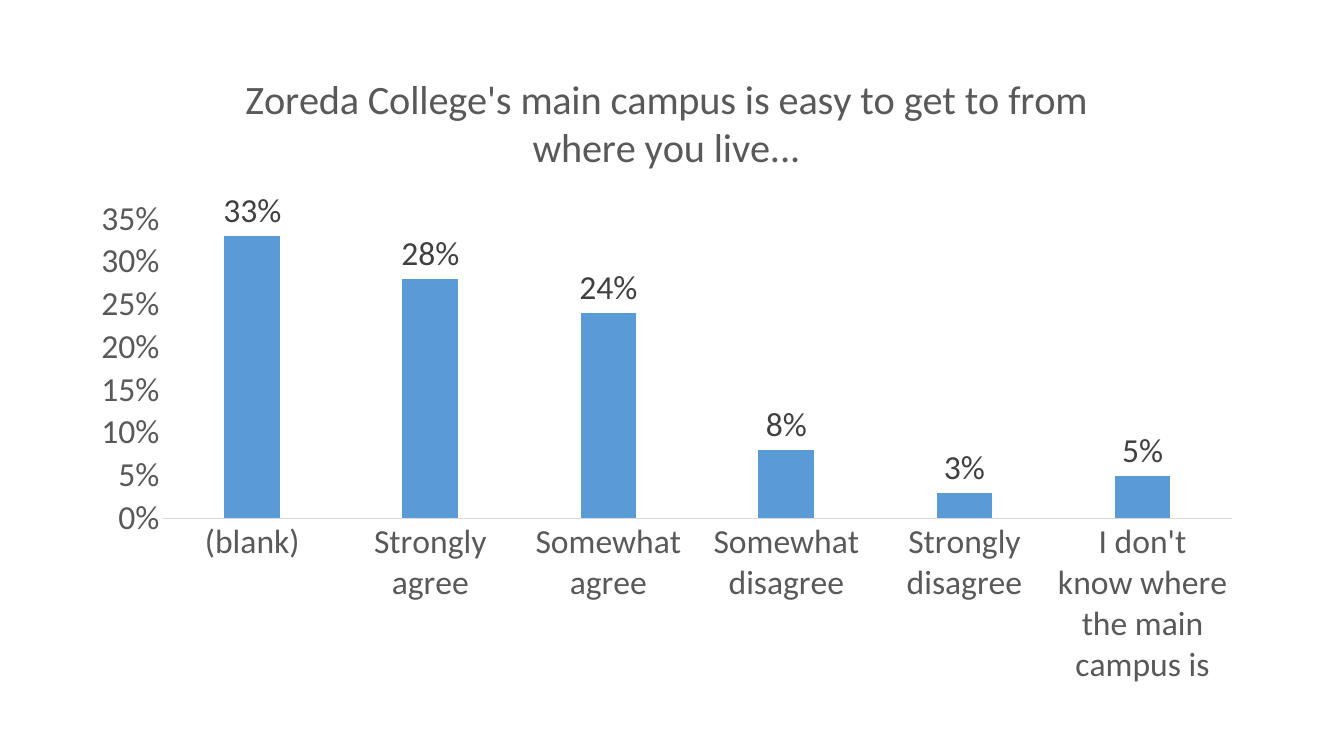
"""Build a slide with a column chart on how easy the campus is to reach."""
from pptx import Presentation
from pptx.chart.data import CategoryChartData
from pptx.dml.color import RGBColor
from pptx.enum.chart import XL_CHART_TYPE as ChartType
from pptx.enum.chart import XL_LABEL_POSITION as LabelPosition
from pptx.enum.chart import XL_TICK_MARK as TickMark
from pptx.util import Pt

BLUE = RGBColor(0x5B, 0x9B, 0xD5)
GREY = RGBColor(0x59, 0x59, 0x59)
DARK_GREY = RGBColor(0x40, 0x40, 0x40)
LIGHT_GREY = RGBColor(0xD9, 0xD9, 0xD9)

TITLE = "Zoreda College's main campus is easy to get to from where you live..."
ANSWERS = {
    "(blank)": 0.33,
    "Strongly agree": 0.28,
    "Somewhat agree": 0.24,
    "Somewhat disagree": 0.08,
    "Strongly disagree": 0.03,
    "I don't know where the main campus is": 0.05,
}


def style_font(font, size, color):
    """Apply the slide's typeface with a size and colour."""
    font.name = "Calibri"
    font.size = Pt(size)
    font.bold = False
    font.color.rgb = color


def add_answer_chart(page):
    """Add the column chart of answers and return it."""
    data = CategoryChartData(number_format="0%")
    data.categories = list(ANSWERS)
    data.add_series("Series 1", list(ANSWERS.values()))
    frame = page.shapes.add_chart(
        ChartType.COLUMN_CLUSTERED, Pt(55.5), Pt(33), Pt(841), Pt(466.5), data
    )
    frame.chart.has_legend = False
    return frame.chart


def add_chart_title(chart):
    """Set and format the chart title."""
    frame = chart.chart_title.text_frame
    frame.text = TITLE
    for run in frame.paragraphs[0].runs:
        style_font(run.font, 28.8, GREY)
    chart.chart_title.include_in_layout = False


def style_axes(chart):
    """Format both axes and fix the percentage scale."""
    for axis in (chart.category_axis, chart.value_axis):
        axis.major_tick_mark = TickMark.NONE
        axis.minor_tick_mark = TickMark.NONE
        axis.has_major_gridlines = False
        style_font(axis.tick_labels.font, 24, GREY)
    chart.category_axis.format.line.color.rgb = LIGHT_GREY
    chart.category_axis.format.line.width = Pt(0.75)
    percent = chart.value_axis
    percent.format.line.fill.background()
    percent.minimum_scale = 0
    percent.maximum_scale = 0.35
    percent.major_unit = 0.05
    percent.tick_labels.number_format = "0%"
    percent.tick_labels.number_format_is_linked = False


def style_columns(chart):
    """Format the columns and their value labels."""
    plot = chart.plots[0]
    plot.gap_width = 219
    plot.overlap = -27
    plot.vary_by_categories = False
    columns = plot.series[0]
    columns.format.fill.solid()
    columns.format.fill.fore_color.rgb = BLUE
    labels = columns.data_labels
    labels.show_value = True
    labels.position = LabelPosition.OUTSIDE_END
    labels.number_format = "0%"
    labels.number_format_is_linked = False
    style_font(labels.font, 24, DARK_GREY)


def main():
    """Build and save the deck."""
    deck = Presentation()
    deck.slide_width = Pt(960)
    deck.slide_height = Pt(540)
    page = deck.slides.add_slide(deck.slide_layouts[6])
    chart = add_answer_chart(page)
    add_chart_title(chart)
    style_axes(chart)
    style_columns(chart)
    deck.save("out.pptx")


if __name__ == "__main__":
    main()
